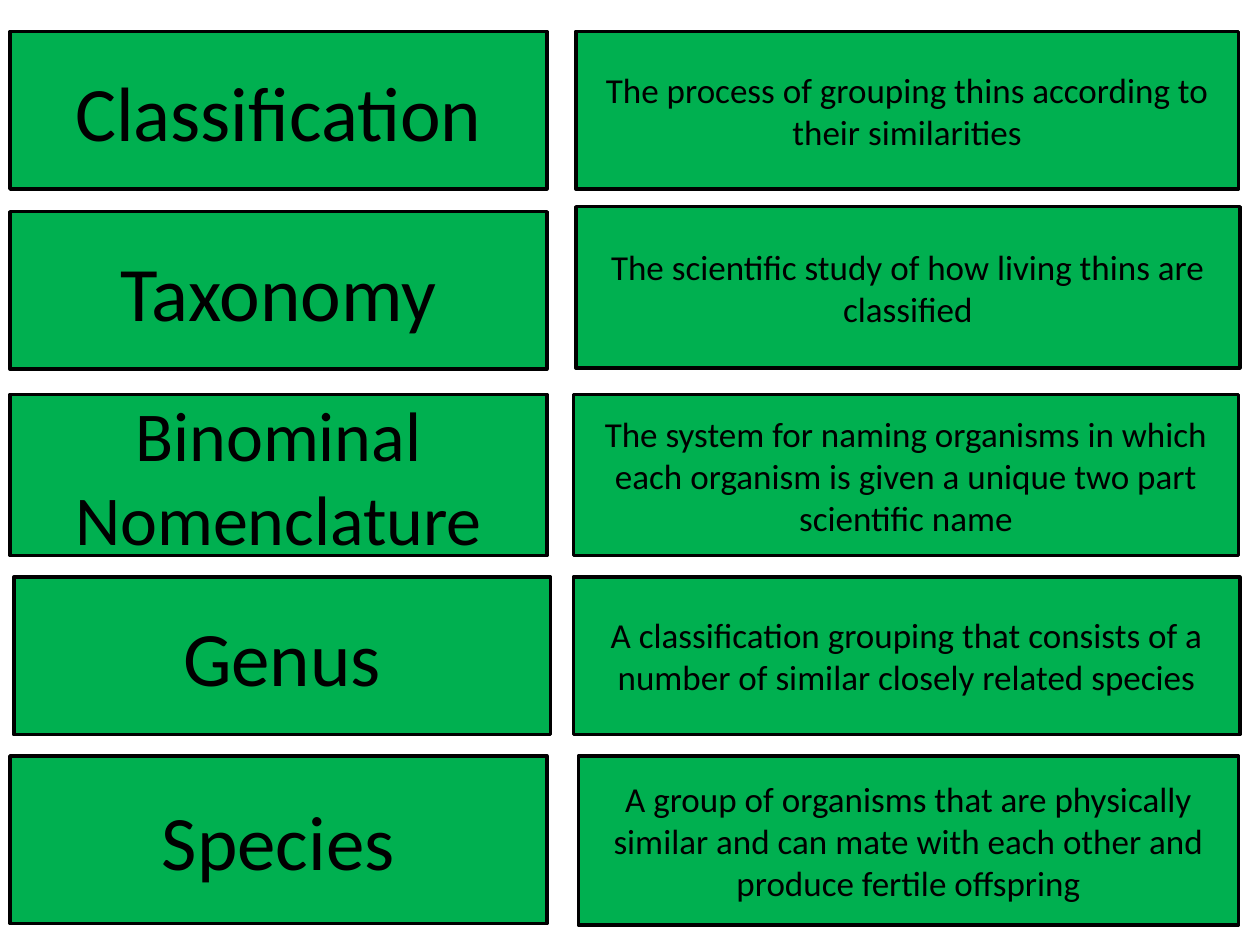
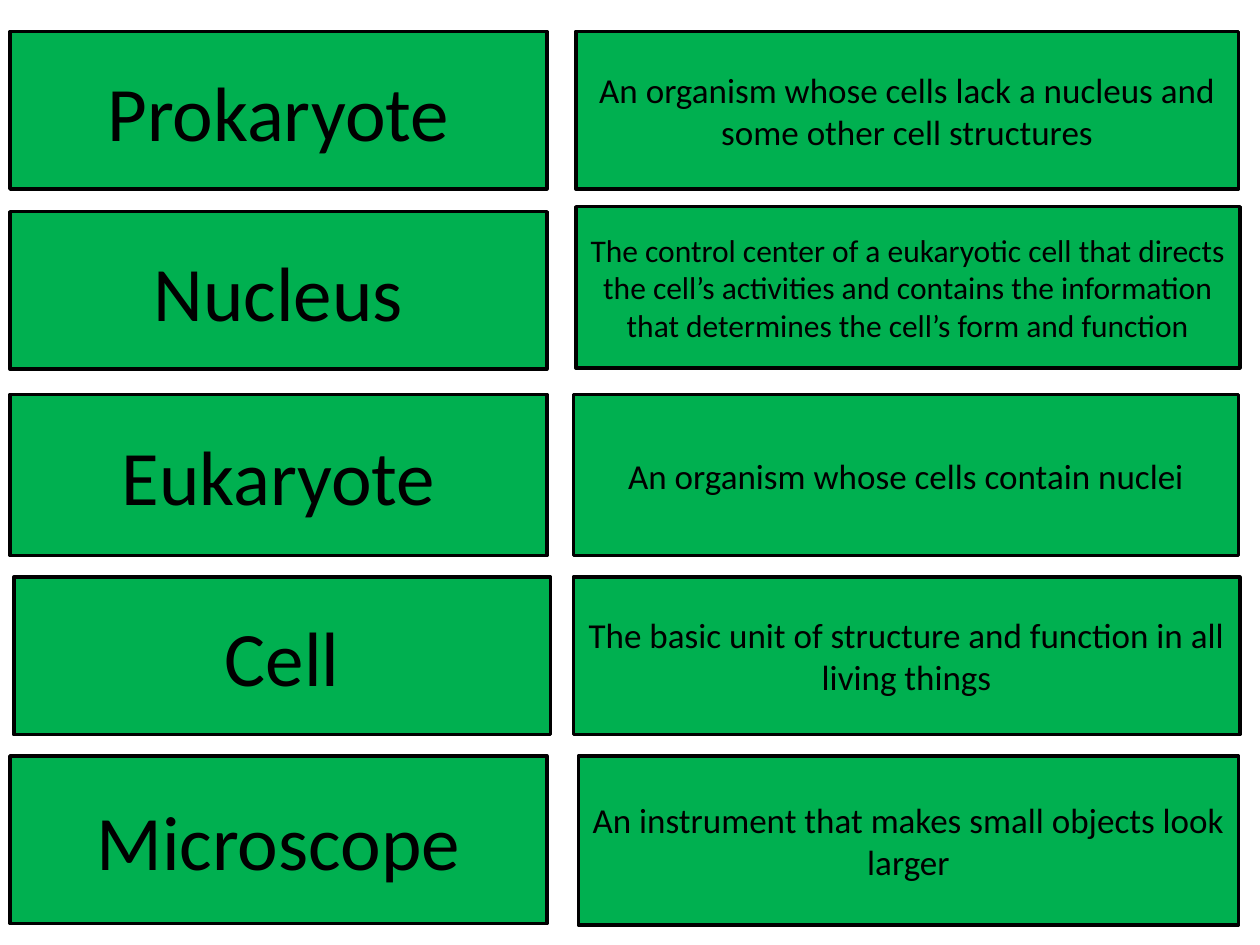
from dataclasses import dataclass

from pptx import Presentation
from pptx import util as u
from pptx.dml import color
from pptx.enum import shapes, text
from pptx.slide import Slide


@dataclass(frozen=True)
class Theme:
    fill: color.RGBColor = color.RGBColor(0x00, 0xB0, 0x50)
    ink: color.RGBColor = color.RGBColor(0x00, 0x00, 0x00)
    font: str = "Calibri"
    term_size: int = 44
    long_term_size: int = 40
    definition_size: int = 20
    long_definition_size: int = 18
    border: int = 2


@dataclass(frozen=True)
class Frame:
    left: float
    top: float
    width: float
    height: float


@dataclass(frozen=True)
class Row:
    term: Frame
    definition: Frame


@dataclass(frozen=True)
class Entry:
    term: str
    definition: str
    term_size: int
    definition_size: int


THEME = Theme()
TERM_WIDTH = 4.26

ROWS = [
    Row(Frame(0.08, 0.25, TERM_WIDTH, 1.25), Frame(4.57, 0.25, 5.26, 1.25)),
    Row(Frame(0.08, 1.68, TERM_WIDTH, 1.25), Frame(4.57, 1.64, 5.27, 1.28)),
    Row(Frame(0.08, 3.13, TERM_WIDTH, 1.28), Frame(4.55, 3.13, 5.28, 1.28)),
    Row(Frame(0.11, 4.58, TERM_WIDTH, 1.25), Frame(4.55, 4.58, 5.29, 1.25)),
    Row(Frame(0.08, 6, TERM_WIDTH, 1.33), Frame(4.59, 6, 5.24, 1.34)),
]


def entry(
    term: str,
    definition: str,
    term_size: int = THEME.term_size,
    definition_size: int = THEME.definition_size,
) -> Entry:
    return Entry(term, definition, term_size, definition_size)


VOCABULARY = [
    [
        entry("Classification", "The process of grouping thins according to their similarities"),
        entry("Taxonomy", "The scientific study of how living thins are classified"),
        entry(
            "Binominal Nomenclature",
            "The system for naming organisms in which each organism is given "
            "a unique two part scientific name",
            term_size=THEME.long_term_size,
        ),
        entry(
            "Genus",
            "A classification grouping that consists of a number of similar "
            "closely related species",
        ),
        entry(
            "Species",
            "A group of organisms that are physically similar and can mate "
            "with each other and produce fertile offspring",
        ),
    ],
    [
        entry(
            "Prokaryote",
            "An organism whose cells lack a nucleus and some other cell structures",
        ),
        entry(
            "Nucleus",
            "The control center of a eukaryotic cell that directs the cell’s "
            "activities and contains the information that determines the "
            "cell’s form and function",
            definition_size=THEME.long_definition_size,
        ),
        entry("Eukaryote", "An organism whose cells contain nuclei"),
        entry("Cell", "The basic unit of structure and function in all living things"),
        entry("Microscope", "An instrument that makes small objects look larger"),
    ],
]


def add_card(page: Slide, frame: Frame, words: str, size: int) -> None:
    card = page.shapes.add_shape(
        shapes.MSO_SHAPE.FLOWCHART_PROCESS,
        u.Inches(frame.left),
        u.Inches(frame.top),
        u.Inches(frame.width),
        u.Inches(frame.height),
    )
    card.shadow.inherit = False
    card.fill.solid()
    card.fill.fore_color.rgb = THEME.fill
    card.line.color.rgb = THEME.ink
    card.line.width = u.Pt(THEME.border)

    box = card.text_frame
    box.word_wrap = True
    box.vertical_anchor = text.MSO_ANCHOR.MIDDLE
    box.text = words
    para = box.paragraphs[0]
    para.alignment = text.PP_ALIGN.CENTER
    span = para.runs[0]
    span.font.name = THEME.font
    span.font.size = u.Pt(size)
    span.font.color.rgb = THEME.ink


def main() -> None:
    deck = Presentation()
    deck.slide_width = u.Inches(10)
    deck.slide_height = u.Inches(7.5)
    blank = deck.slide_layouts[6]
    for entries in VOCABULARY:
        page = deck.slides.add_slide(blank)
        for row, item in zip(ROWS, entries):
            add_card(page, row.term, item.term, item.term_size)
            add_card(page, row.definition, item.definition, item.definition_size)
    deck.save("out.pptx")


if __name__ == "__main__":
    main()
